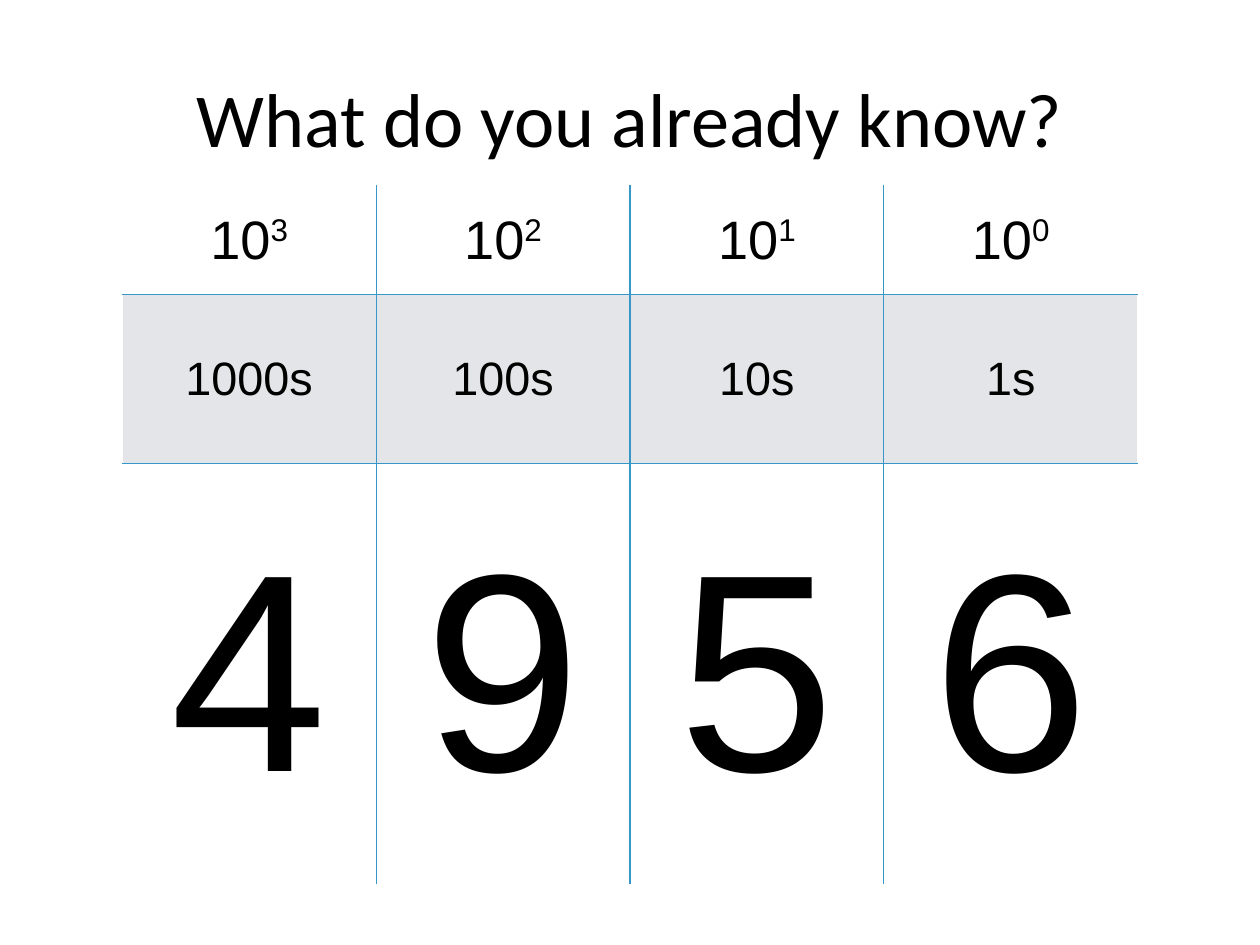
from dataclasses import dataclass

from lxml import etree
from pptx import Presentation, util as u
from pptx.dml.color import RGBColor
from pptx.enum import text
from pptx.oxml import ns


@dataclass
class Theme:
    ink: str = "000000"
    rule: str = "3797C6"
    band: str = "E3E5E8"
    paper: str = "FFFFFF"
    head: str = "Calibri"
    body: str = "Arial"
    title: int = 62
    power: int = 44
    place: int = 38
    digit: int = 229


class Board:
    def __init__(self, slide, theme):
        self.slide = slide
        self.theme = theme

    def style(self, para, font, size):
        para.alignment = text.PP_ALIGN.CENTER
        for run in para.runs:
            run.font.name = font
            run.font.size = u.Pt(size)
            run.font.bold = False
            run.font.color.rgb = RGBColor.from_string(self.theme.ink)

    def title(self, words, *area):
        box = self.slide.shapes.add_textbox(*map(u.Inches, area))
        frame = box.text_frame
        frame.word_wrap = True
        frame.vertical_anchor = text.MSO_ANCHOR.MIDDLE
        frame.text = words
        self.style(frame.paragraphs[0], self.theme.head, self.theme.title)

    def edge(self, cell, side):
        props = cell._tc.get_or_add_tcPr()
        line = etree.SubElement(props, ns.qn(f"a:ln{side}"), w=str(u.Pt(1)))
        fill = etree.SubElement(line, ns.qn("a:solidFill"))
        etree.SubElement(fill, ns.qn("a:srgbClr"), val=self.theme.rule)

    def cell(self, cell, words, size, fill, sides):
        cell.margin_left = cell.margin_right = u.Inches(0.06)
        cell.margin_top = cell.margin_bottom = u.Inches(0.06)
        cell.vertical_anchor = text.MSO_ANCHOR.MIDDLE
        # A caret marks the start of a superscript
        base, _, power = words.partition("^")
        cell.text_frame.text = base
        para = cell.text_frame.paragraphs[0]
        if power:
            run = para.add_run()
            run.text = power
            run.font._element.set("baseline", "32000")
        self.style(para, self.theme.body, size)
        for side in sides:
            self.edge(cell, side)
        cell.fill.solid()
        cell.fill.fore_color.rgb = RGBColor.from_string(fill)

    def table(self, rows, left, top, width, highs):
        count = len(rows[0][0])
        area = map(u.Inches, (left, top, width, sum(highs)))
        grid = self.slide.shapes.add_table(len(rows), count, *area).table
        grid.first_row = grid.horz_banding = False
        for r, (words, size, fill) in enumerate(rows):
            grid.rows[r].height = u.Inches(highs[r])
            for c, word in enumerate(words):
                # Rules run only between cells
                inner = {"L": c > 0, "R": c < count - 1,
                         "T": r > 0, "B": r < len(rows) - 1}
                sides = [side for side, shown in inner.items() if shown]
                self.cell(grid.cell(r, c), word, size, fill, sides)


def main():
    deck = Presentation()
    deck.slide_width = u.Inches(14.22)
    deck.slide_height = u.Inches(10.67)
    look = Theme()
    board = Board(deck.slides.add_slide(deck.slide_layouts[6]), look)

    # Heading
    board.title("What do you already know?", 0.71, 0.43, 12.8, 1.78)

    # Place value table
    powers = range(3, -1, -1)
    rows = [
        ([f"10^{n}" for n in powers], look.power, look.paper),
        ([f"{10 ** n}s" for n in powers], look.place, look.band),
        (list("4956"), look.digit, look.paper),
    ]
    board.table(rows, 1.38, 2.1, 11.46, (1.23, 1.9, 4.76))

    deck.save("out.pptx")


if __name__ == "__main__":
    main()
